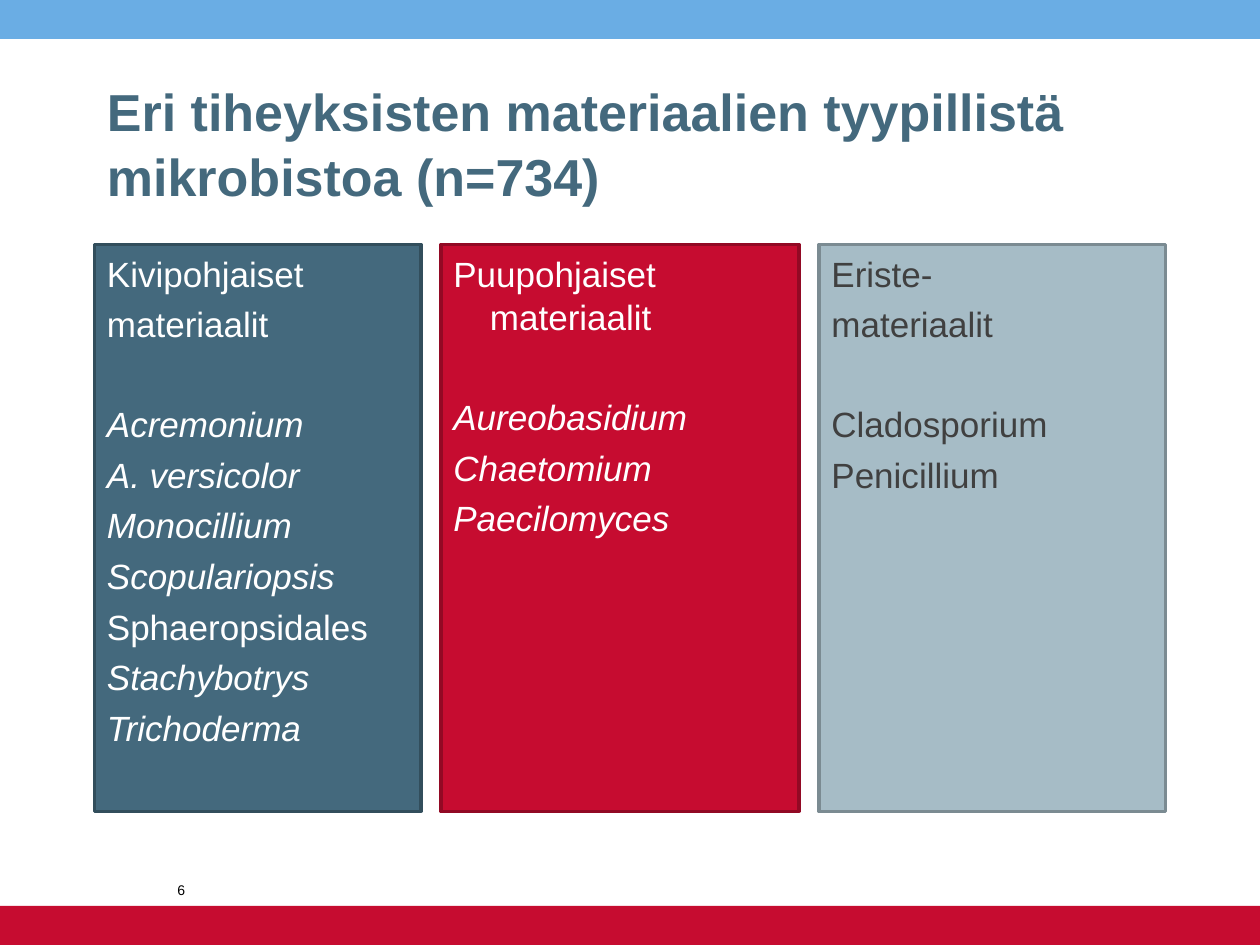
from pptx import Presentation
from pptx.dml.color import RGBColor
from pptx.enum.shapes import MSO_SHAPE as Shape
from pptx.enum.text import MSO_ANCHOR as Anchor, PP_ALIGN as Align
from pptx.util import Inches, Pt

COLORS = {
    "sky": "6AADE4", "red": "C60C30", "dark_red": "920924",
    "slate": "44697D", "dark_slate": "324E5C",
    "mist": "A6BCC6", "dark_mist": "7B8B92",
    "white": "FFFFFF", "charcoal": "404040", "black": "000000",
}
FONT = "Arial"
LINE_SPACING = 1.04
PARA_GAP = 4
GROUP_GAP = 32  # space between a heading and its species list


def color(name):
    return RGBColor.from_string(COLORS[name])


def write(para, text, size=20, ink="white", bold=False, italic=False,
          before=0, hang=0):
    """Write one formatted paragraph, with an optional hanging indent."""
    para.alignment = Align.LEFT
    para.line_spacing = LINE_SPACING
    para.space_before = Pt(before)
    if hang:
        props = para._p.get_or_add_pPr()
        props.set("marL", str(Inches(hang)))
        props.set("indent", str(-Inches(hang)))
    span = para.add_run()
    span.text = text
    span.font.name = FONT
    span.font.size = Pt(size)
    span.font.bold = bold
    span.font.italic = italic
    span.font.color.rgb = color(ink)


def add_panel(page, box, fill, edge=None):
    panel = page.shapes.add_shape(Shape.RECTANGLE, *map(Inches, box))
    panel.shadow.inherit = False
    panel.fill.solid()
    panel.fill.fore_color.rgb = color(fill)
    if edge:
        panel.line.color.rgb = color(edge)
        panel.line.width = Pt(2)
    else:
        panel.line.fill.background()
    return panel


def add_label(page, box, text, bottom_inset=0.05, **style):
    """Add a text box whose text sits at the bottom."""
    frame = page.shapes.add_textbox(*map(Inches, box)).text_frame
    frame.word_wrap = True
    frame.vertical_anchor = Anchor.BOTTOM
    frame.margin_top = 0
    frame.margin_bottom = Inches(bottom_inset)
    write(frame.paragraphs[0], text, **style)


def add_column(page, box, fill, edge, ink, hang, heading, species, upright=()):
    """Add a material panel: heading lines, a gap, then the species."""
    frame = add_panel(page, box, fill, edge).text_frame
    frame.word_wrap = True
    frame.vertical_anchor = Anchor.TOP
    for index, text in enumerate(heading + species):
        para = frame.add_paragraph() if index else frame.paragraphs[0]
        if index == 0:
            before = 0
        elif index == len(heading):
            before = GROUP_GAP
        else:
            before = PARA_GAP
        italic = index >= len(heading) and text not in upright
        write(para, text, ink=ink, italic=italic, before=before, hang=hang)


def add_frame(page, number):
    """Add the top and bottom bands and the page number."""
    add_panel(page, (0, 0, 10, 0.31), "sky")
    add_panel(page, (0, 7.19, 10, 0.31), "red")
    add_label(page, (1.31, 6.78, 1.97, 0.4), number, size=8, ink="black")


def add_columns(page, top, height):
    insulation = ["Cladosporium", "Penicillium"]
    columns = [
        (0.75, 2.59, "slate", "dark_slate", "white", 0.29,
         ["Kivipohjaiset", "materiaalit"],
         ["Acremonium", "A. versicolor", "Monocillium", "Scopulariopsis",
          "Sphaeropsidales", "Stachybotrys", "Trichoderma"],
         ["Sphaeropsidales"]),
        (3.5, 2.84, "red", "dark_red", "white", 0.29,
         ["Puupohjaiset materiaalit"],
         ["Aureobasidium", "Chaetomium", "Paecilomyces"], []),
        (6.5, 2.75, "mist", "dark_mist", "charcoal", 0.38,
         ["Eriste-", "materiaalit"], insulation, insulation),
    ]
    for left, width, *content in columns:
        add_column(page, (left, top, width, height), *content)


def main():
    deck = Presentation()
    deck.slide_width, deck.slide_height = Inches(10), Inches(7.5)
    page = deck.slides.add_slide(deck.slide_layouts[6])
    add_frame(page, "6")
    # Title
    add_label(page, (0.75, 0.79, 8.19, 1.18),
              "Eri tiheyksisten materiaalien tyypillistä mikrobistoa (n=734)",
              bottom_inset=0.33, size=29.7, ink="slate", bold=True)
    # Material columns
    add_columns(page, top=1.94, height=4.5)
    deck.save("out.pptx")


if __name__ == "__main__":
    main()
